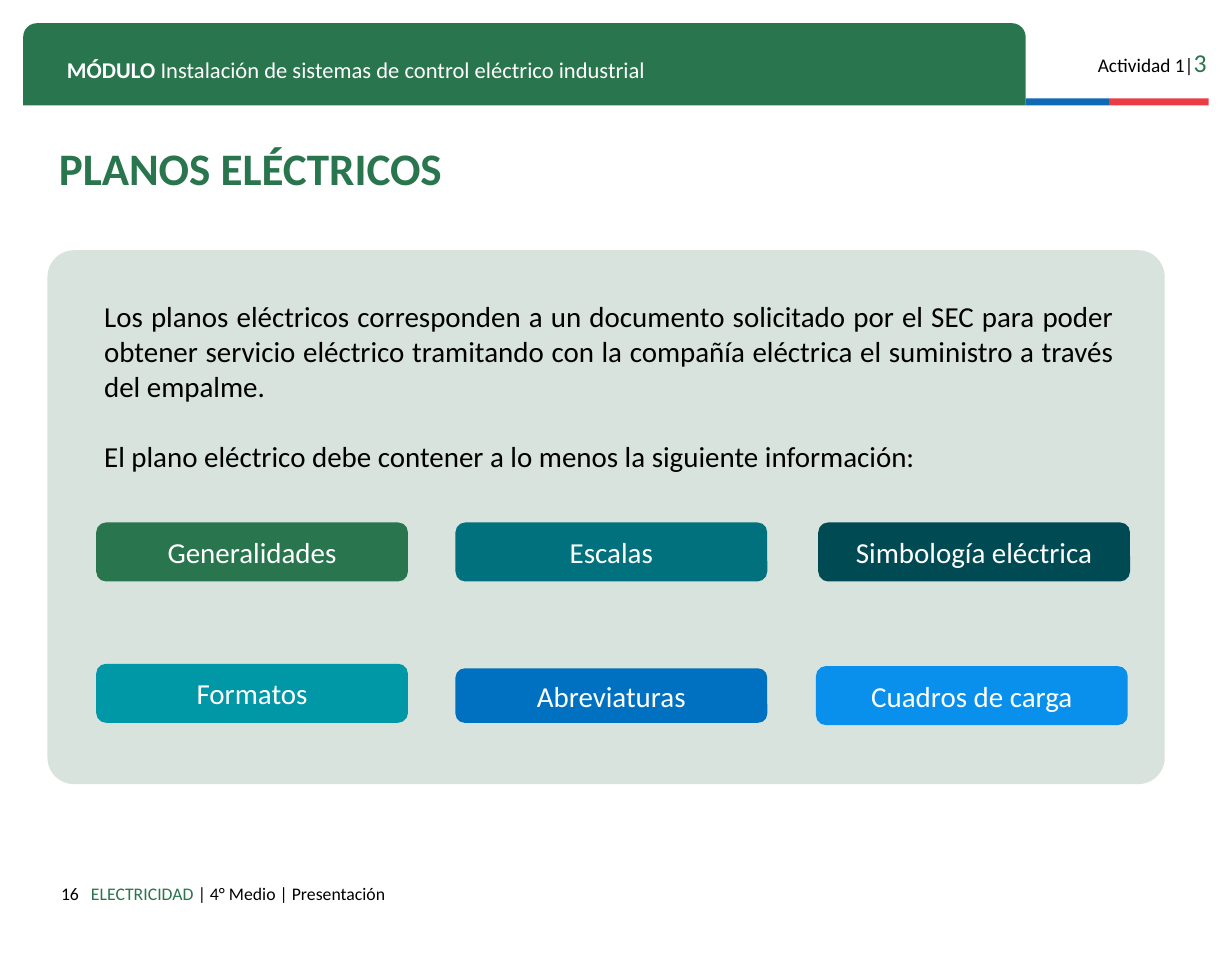
import pptx
import pptx.dml.color
import pptx.enum.shapes
import pptx.enum.text
import pptx.util

Pt = pptx.util.Pt
SHAPES = pptx.enum.shapes.MSO_SHAPE
ALIGN = pptx.enum.text.PP_ALIGN
ANCHOR = pptx.enum.text.MSO_ANCHOR

COLORS = {
    "green": "29754D", "blue": "0F69B4", "red": "EB3C46", "pale": "D7E3DC",
    "turquoise": "0097A7", "teal": "00717D", "deep_teal": "004B53",
    "cobalt": "0070C0", "sky": "0990EC", "black": "000000", "white": "FFFFFF",
}

BUTTONS = [
    ("Generalidades", "green", 30.24, 169.2, 36.72),
    ("Escalas", "teal", 253.44, 169.2, 36.72),
    ("Simbología eléctrica", "deep_teal", 478.8, 169.2, 36.72),
    ("Formatos", "turquoise", 30.24, 257.04, 36.72),
    ("Abreviaturas", "cobalt", 253.44, 259.92, 33.84),
    ("Cuadros de carga", "sky", 477.36, 258.48, 36.72),
]


def rgb(name):
    """Return the named colour."""
    return pptx.dml.color.RGBColor.from_string(COLORS[name])


def add_block(slide, kind, box, color, adjustments=()):
    """Add a flat filled shape without outline."""
    shape = slide.shapes.add_shape(kind, *[Pt(length) for length in box])
    shape.shadow.inherit = False
    shape.fill.solid()
    shape.fill.fore_color.rgb = rgb(color)
    shape.line.fill.background()
    for index, value in enumerate(adjustments):
        shape.adjustments[index] = value
    return shape


def write(shape, paragraphs, align=ALIGN.LEFT, anchor=ANCHOR.TOP, inset=7.2):
    """Fill a shape with paragraphs of (text, size, colour, bold) runs."""
    frame = shape.text_frame
    frame.word_wrap = True
    frame.vertical_anchor = anchor
    frame.margin_left = frame.margin_right = Pt(7.2)
    frame.margin_top = frame.margin_bottom = Pt(inset)
    for index, runs in enumerate(paragraphs):
        paragraph = frame.add_paragraph() if index else frame.paragraphs[0]
        paragraph.alignment = align
        for text, size, color, bold in runs:
            run = paragraph.add_run()
            run.text = text
            run.font.name = "Calibri"
            run.font.size = Pt(size)
            run.font.bold = bold
            run.font.color.rgb = rgb(color)
    return frame


def add_text(slide, box, paragraphs, **layout):
    """Add a text box and return its text frame."""
    shape = slide.shapes.add_textbox(*[Pt(length) for length in box])
    return write(shape, paragraphs, **layout)


def add_header(slide, left, top, width, height):
    """Draw the module banner, the two-colour rule and the activity number."""
    banner, blue, stripe = 622.8, 51.84, 4.32
    rule_top = top + height - stripe
    add_block(slide, SHAPES.ROUND_2_SAME_RECTANGLE,
              (left, top, banner, height), "green", (0.167, 0))
    add_block(slide, SHAPES.RECTANGLE,
              (left + banner, rule_top, blue, stripe), "blue")
    add_block(slide, SHAPES.RECTANGLE,
              (left + banner + blue, rule_top, width - banner - blue, stripe), "red")
    add_text(slide, (left + width - 86.4, top + 7.2, 92.16, 27.36),
             [[("Actividad 1|", 12, "black", False), ("3", 16, "green", False)]],
             align=ALIGN.RIGHT)
    add_text(slide, (left + 20.16, top + 12.96, 586.08, 25.2),
             [[("MÓDULO", 14, "white", True),
               (" Instalación de sistemas de control eléctrico industrial",
                14, "white", False)]])


def add_title(slide, left, top, width, height):
    """Write the slide title."""
    frame = add_text(slide, (left, top, width, height),
                     [[("PLANOS ELÉCTRICOS", 28, "green", True)]],
                     anchor=ANCHOR.MIDDLE)
    frame.paragraphs[0].line_spacing = 0.8


def add_panel(slide, left, top, width, height):
    """Draw the panel with its explanation and the six topic buttons."""
    add_block(slide, SHAPES.ROUNDED_RECTANGLE,
              (left, top, width, height), "pale", (0.05,))
    explanation = (
        "Los planos eléctricos corresponden a un documento solicitado por el SEC "
        "para poder obtener servicio eléctrico tramitando con la compañía eléctrica "
        "el suministro a través del empalme.",
        "El plano eléctrico debe contener a lo menos la siguiente información:",
    )
    frame = add_text(slide, (left + 28.08, top + 26.64, width - 52.56, 116.64),
                     [[(text, 18, "black", False)] for text in explanation],
                     align=ALIGN.JUSTIFY, inset=3.6)
    frame.paragraphs[1].space_before = Pt(22)
    for label, color, x, y, button_height in BUTTONS:
        button = add_block(slide, SHAPES.ROUNDED_RECTANGLE,
                           (left + x, top + y, 193.68, button_height),
                           color, (0.167,))
        write(button, [[(label, 18, "white", False)]],
              align=ALIGN.CENTER, anchor=ANCHOR.MIDDLE, inset=3.6)


def add_footer(slide, left, top, width, height):
    """Write the page number and the course line."""
    number_width = 41.76
    add_text(slide, (left, top, number_width, height),
             [[("16", 11, "black", False)]], align=ALIGN.RIGHT)
    add_text(slide, (left + 35, top, width - 35, height),
             [[("ELECTRICIDAD ", 11, "green", False),
               ("| 4° Medio | Presentación", 11, "black", False)]])


def main():
    """Build the presentation and save it."""
    presentation = pptx.Presentation()
    presentation.slide_width = Pt(765.36)
    presentation.slide_height = Pt(595.44)
    slide = presentation.slides.add_slide(presentation.slide_layouts[6])
    add_header(slide, 14.4, 14.4, 736.56, 51.12)
    add_footer(slide, 14.4, 542.16, 549.36, 24)
    add_title(slide, 29.52, 92.88, 627.84, 28.08)
    add_panel(slide, 29.52, 155.52, 694.08, 331.92)
    presentation.save("out.pptx")


if __name__ == "__main__":
    main()
